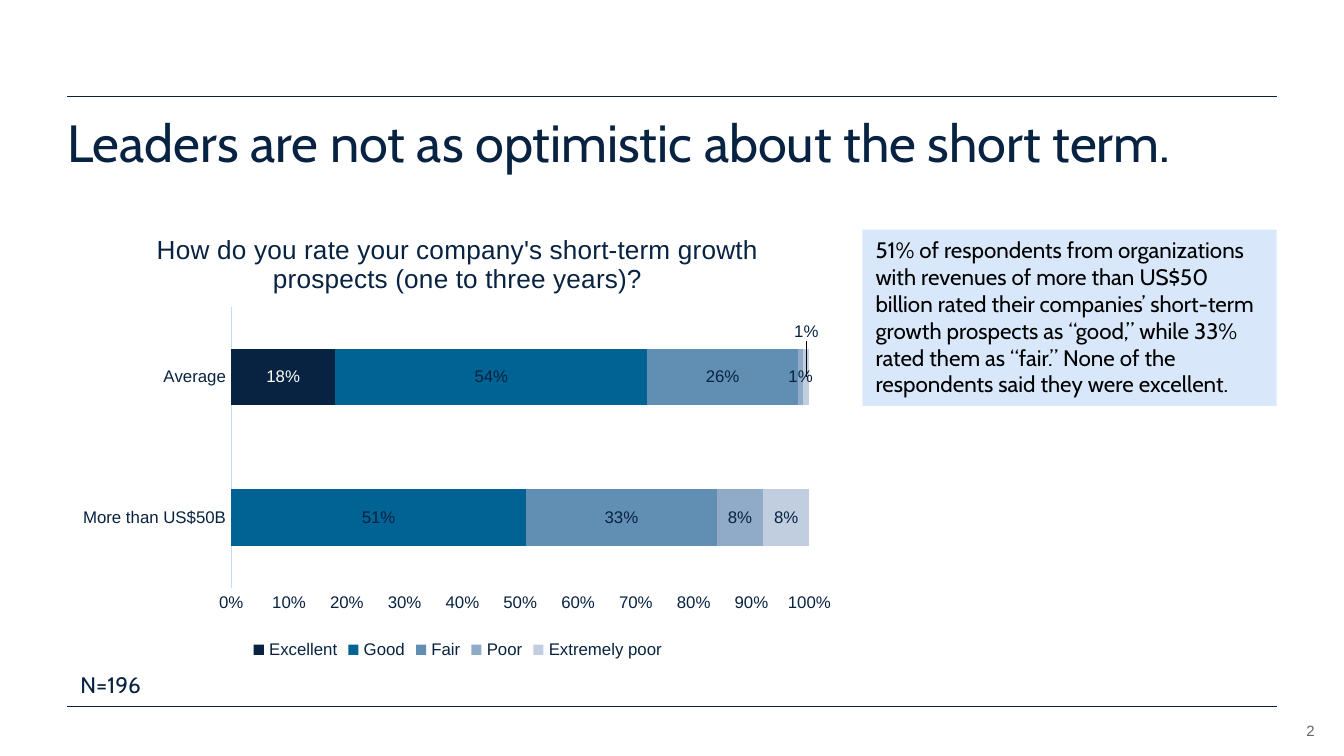
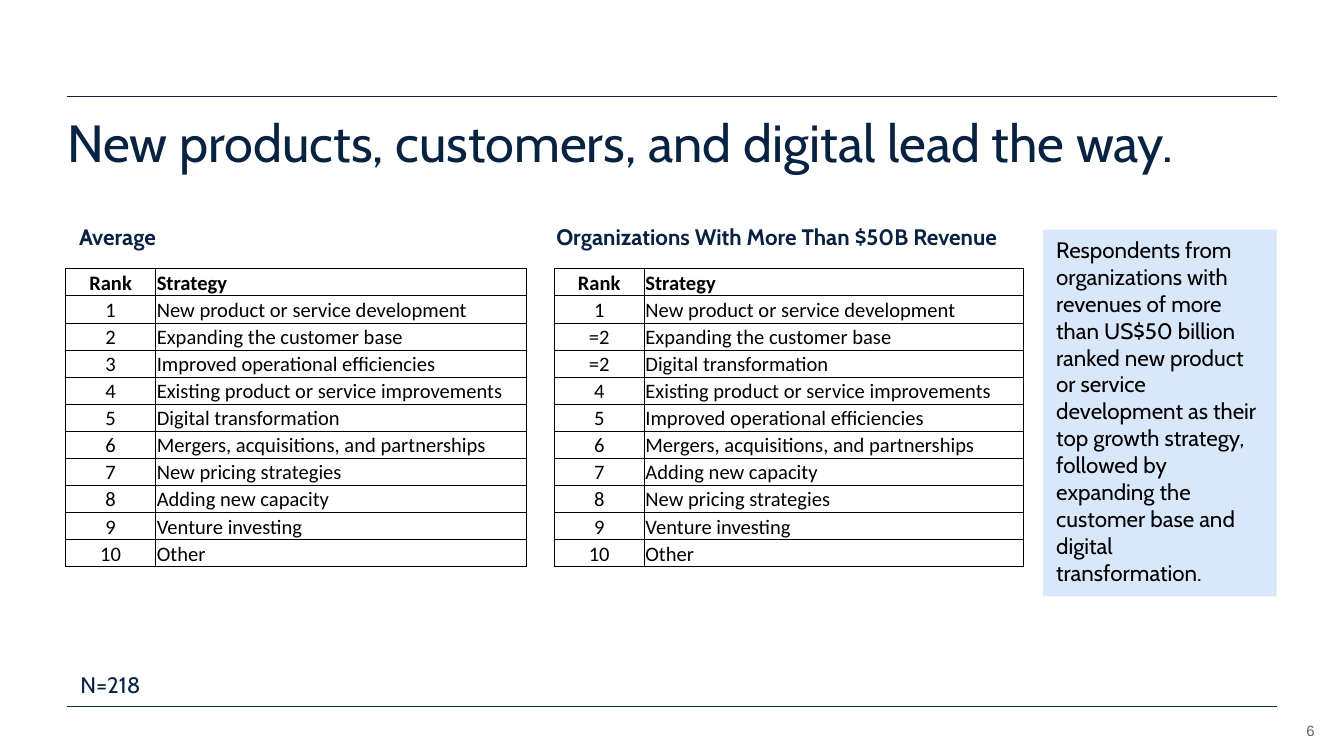
from lxml import etree
from pptx import Presentation
from pptx import util as u
from pptx.chart.data import CategoryChartData
from pptx.dml.color import RGBColor
from pptx.enum import chart as ch
from pptx.enum import shapes, text
from pptx.oxml import parse_xml
from pptx.oxml.ns import nsdecls, qn

EMU_PER_PX = 9525  # 96 px to the inch
WIDTH, HEIGHT = 960, 540
LEFT, RIGHT = 48, 912
RULES_Y = (69, 505)
TITLE_ONLY = 5

COLORS = {
    "navy": "082241",
    "blue": "006393",
    "steel": "618EB3",
    "mist": "8FABC8",
    "haze": "C1CEDF",
    "axis": "C5DCF8",
    "callout": "D8E8FA",
    "gray": "666666",
    "black": "000000",
    "white": "FFFFFF",
}

STYLES = {
    "title": {"name": "Cabin", "size": 28, "color": "navy"},
    "callout": {"name": "Cabin", "size": 12, "color": "black"},
    "note": {"name": "Cabin", "size": 12, "color": "navy"},
    "heading": {"name": "Cabin", "size": 12, "color": "navy", "bold": True},
    "page": {"name": "Arial", "size": 8, "color": "gray"},
    "head cell": {"name": "Calibri", "size": 11, "color": "black", "bold": True},
    "cell": {"name": "Calibri", "size": 11, "color": "black", "bold": False},
    "chart": {"name": "Arial", "size": 10, "color": "navy"},
    "chart title": {"name": "Arial", "size": 14, "color": "navy", "bold": False},
    "chart label": {"name": "Arial", "size": 9, "color": "navy"},
    "light label": {"name": "Arial", "size": 9, "color": "white"},
}

NO_INSETS = {f"margin_{side}": 0 for side in ("left", "top", "right", "bottom")}
CELL_INSETS = {**NO_INSETS, "margin_left": u.Emu(EMU_PER_PX),
               "margin_top": u.Emu(EMU_PER_PX), "margin_right": u.Emu(EMU_PER_PX)}

# name, fill, label style, values for the two categories
RATINGS = [
    ("Excellent", "navy", "light label", (None, 0.18)),
    ("Good", "blue", "chart label", (0.51, 0.54)),
    ("Fair", "steel", "chart label", (0.33, 0.26)),
    ("Poor", "mist", "chart label", (0.08, 0.01)),
    ("Extremely poor", "haze", "chart label", (0.08, 0.01)),
]

AVERAGE_RANKING = [
    ("1", "New product or service development"),
    ("2", "Expanding the customer base"),
    ("3", "Improved operational efficiencies"),
    ("4", "Existing product or service improvements"),
    ("5", "Digital transformation"),
    ("6", "Mergers, acquisitions, and partnerships"),
    ("7", "New pricing strategies"),
    ("8", "Adding new capacity"),
    ("9", "Venture investing"),
    ("10", "Other"),
]

LARGE_RANKING = [
    ("1", "New product or service development"),
    ("=2", "Expanding the customer base"),
    ("=2", "Digital transformation"),
    ("4", "Existing product or service improvements"),
    ("5", "Improved operational efficiencies"),
    ("6", "Mergers, acquisitions, and partnerships"),
    ("7", "Adding new capacity"),
    ("8", "New pricing strategies"),
    ("9", "Venture investing"),
    ("10", "Other"),
]


def px(*lengths):
    return [u.Emu(length * EMU_PER_PX) for length in lengths]


def rgb(color):
    return RGBColor.from_string(COLORS[color])


def set_all(target, values):
    for name, value in values.items():
        setattr(target, name, value)


def style_font(font, style):
    values = dict(STYLES[style])
    font.color.rgb = rgb(values.pop("color"))
    values["size"] = u.Pt(values["size"])
    set_all(font, values)


def write(frame, words, style, align=text.PP_ALIGN.LEFT, **frame_values):
    """Put one styled paragraph in a text frame."""
    set_all(frame, {"word_wrap": True,
                    "vertical_anchor": text.MSO_ANCHOR.TOP, **frame_values})
    paragraph = frame.paragraphs[0]
    paragraph.alignment = align
    run = paragraph.add_run()
    run.text = words
    style_font(run.font, style)
    return paragraph


def add_label(slide, box, words, style, **options):
    shape = slide.shapes.add_textbox(*px(*box))
    write(shape.text_frame, words, style, **options)


def add_callout(slide, box, words):
    shape = slide.shapes.add_shape(shapes.MSO_SHAPE.RECTANGLE, *px(*box))
    shape.shadow.inherit = False
    shape.fill.solid()
    shape.fill.fore_color.rgb = rgb("callout")
    shape.line.fill.background()
    write(shape.text_frame, words, "callout")


def add_rule(slide, y):
    rule = slide.shapes.add_connector(
        shapes.MSO_CONNECTOR.STRAIGHT, *px(LEFT, y, RIGHT, y))
    rule.line.color.rgb = rgb("navy")
    rule.line.width = u.Pt(0.5)
    etree.SubElement(rule._element.spPr, qn("a:effectLst"))


def add_slide(presentation, title, page, note):
    """Add a slide with the shared title, rules, sample note and page number."""
    slide = presentation.slides.add_slide(presentation.slide_layouts[TITLE_ONLY])
    for y in RULES_Y:
        add_rule(slide, y)
    add_label(slide, (894, 511, 45, 17), page, "page", align=text.PP_ALIGN.RIGHT,
              **{**NO_INSETS, "vertical_anchor": text.MSO_ANCHOR.BOTTOM})
    heading = slide.shapes.title
    box = px(LEFT, 84, RIGHT - LEFT, 53)
    set_all(heading, dict(zip(("left", "top", "width", "height"), box)))
    paragraph = write(heading.text_frame, title, "title",
                      auto_size=text.MSO_AUTO_SIZE.NONE, **NO_INSETS)
    paragraph.line_spacing = 0.9
    add_label(slide, (LEFT, 475, 84, 29), note, "note")
    return slide


def manual_layout(x, y, size=None, inner=False):
    """Make a c:layout; positions and size are fractions of the chart."""
    parts = {"layoutTarget": "inner"} if inner else {}
    if size:
        parts.update(xMode="edge", yMode="edge")
    parts.update(x=x, y=y)
    if inner:
        parts.update(w=size[0], h=size[1])
    body = "".join(f'<c:{tag} val="{value}"/>' for tag, value in parts.items())
    return parse_xml(f'<c:layout {nsdecls("c")}><c:manualLayout>{body}'
                     "</c:manualLayout></c:layout>")


def place_plot(chart, x, y, width, height):
    plot_area = chart._chartSpace.chart.plotArea
    for layout in plot_area.findall(qn("c:layout")):
        plot_area.remove(layout)
    plot_area.insert(0, manual_layout(x, y, (width, height), inner=True))


def style_axis(axis):
    set_all(axis, {"has_major_gridlines": False,
                   "major_tick_mark": ch.XL_TICK_MARK.NONE,
                   "minor_tick_mark": ch.XL_TICK_MARK.NONE})
    style_font(axis.tick_labels.font, "chart label")


def style_series(series, color, label_style):
    series.format.fill.solid()
    series.format.fill.fore_color.rgb = rgb(color)
    labels = series.data_labels
    set_all(labels, {"show_value": True, "number_format": "0%",
                     "number_format_is_linked": False,
                     "position": ch.XL_LABEL_POSITION.CENTER})
    style_font(labels.font, label_style)


def lift_label(series, point, rise):
    """Move one data label up by a fraction of the chart height."""
    label = series.points[point].data_label
    style_font(label.font, "chart label")
    label.position = ch.XL_LABEL_POSITION.CENTER
    element = series.data_labels._element.find(qn("c:dLbl"))
    element.insert(1, manual_layout(0, -rise))


def add_ratings_chart(slide, box, title):
    data = CategoryChartData(number_format="0%")
    data.categories = ["More than US$50B", "Average"]
    for name, _, _, values in RATINGS:
        data.add_series(name, values)
    chart = slide.shapes.add_chart(
        ch.XL_CHART_TYPE.BAR_STACKED_100, *px(*box), data).chart
    style_font(chart.font, "chart")

    write(chart.chart_title.text_frame, title, "chart title",
          align=text.PP_ALIGN.CENTER)
    chart.chart_title.include_in_layout = False
    place_plot(chart, 0.21, 0.21, 0.74, 0.62)

    chart.has_legend = True
    set_all(chart.legend, {"position": ch.XL_LEGEND_POSITION.BOTTOM,
                           "include_in_layout": False})
    style_font(chart.legend.font, "chart label")

    style_axis(chart.category_axis)
    axis_line = chart.category_axis.format.line
    axis_line.color.rgb = rgb("axis")
    axis_line.width = u.Pt(0.75)
    style_axis(chart.value_axis)
    chart.value_axis.format.line.fill.background()
    set_all(chart.value_axis, {"minimum_scale": 0, "maximum_scale": 1,
                               "major_unit": 0.1})
    set_all(chart.value_axis.tick_labels, {"number_format": "0%",
                                           "number_format_is_linked": False})

    plot = chart.plots[0]
    set_all(plot, {"gap_width": 150, "overlap": 100, "vary_by_categories": False})
    for series, (_, color, label_style, _) in zip(plot.series, RATINGS):
        style_series(series, color, label_style)
    lift_label(plot.series[-1], 1, 0.1)


def add_borders(cell):
    properties = cell._tc.get_or_add_tcPr()
    for side in "LRTB":
        properties.append(parse_xml(
            f'<a:ln{side} {nsdecls("a")} w="{u.Pt(0.5)}"><a:solidFill>'
            f'<a:srgbClr val="{COLORS["black"]}"/></a:solidFill></a:ln{side}>'))


def add_ranking(slide, left, strategy_width, ranking):
    rows = [("Rank", "Strategy"), *ranking]
    widths = (64, strategy_width)
    table = slide.shapes.add_table(
        len(rows), 2, *px(left, 192, sum(widths), 213)).table
    set_all(table, {"first_row": False, "horz_banding": False})
    for column, width in zip(table.columns, px(*widths)):
        column.width = width
    aligns = (text.PP_ALIGN.CENTER, text.PP_ALIGN.LEFT)
    for r, row in enumerate(rows):
        for c, words in enumerate(row):
            cell = table.cell(r, c)
            set_all(cell, {**CELL_INSETS,
                           "vertical_anchor": text.MSO_ANCHOR.BOTTOM})
            add_borders(cell)
            cell.fill.background()
            paragraph = cell.text_frame.paragraphs[0]
            paragraph.alignment = aligns[c]
            run = paragraph.add_run()
            run.text = words
            style_font(run.font, "cell" if r else "head cell")


def build_short_term(presentation):
    slide = add_slide(presentation,
                      "Leaders are not as optimistic about the short term.",
                      "2", "N=196")
    add_callout(slide, (616, 164, 296, 126),
                "51% of respondents from organizations with revenues of more than "
                "US$50 billion rated their companies’ short-term growth prospects "
                "as “good,” while 33% rated them as “fair.” None of the "
                "respondents said they were excellent.")
    add_ratings_chart(slide, (LEFT, 151, 558, 324),
                      "How do you rate your company's short-term growth "
                      "prospects (one to three years)?")


def build_strategies(presentation):
    slide = add_slide(presentation,
                      "New products, customers, and digital lead the way.",
                      "6", "N=218")
    add_callout(slide, (745, 164, 167, 262),
                "Respondents from organizations with revenues of more than US$50 "
                "billion ranked new product or service development as their top "
                "growth strategy, followed by expanding the customer base and "
                "digital transformation.")
    add_ranking(slide, 47, 265, AVERAGE_RANKING)
    add_ranking(slide, 396, 271, LARGE_RANKING)
    add_label(slide, (47, 155, 221, 29), "Average", "heading")
    add_label(slide, (388, 155, 342, 29),
              "Organizations With More Than $50B Revenue", "heading")


def main():
    presentation = Presentation()
    presentation.slide_width, presentation.slide_height = px(WIDTH, HEIGHT)
    build_short_term(presentation)
    build_strategies(presentation)
    presentation.save("out.pptx")


if __name__ == "__main__":
    main()
